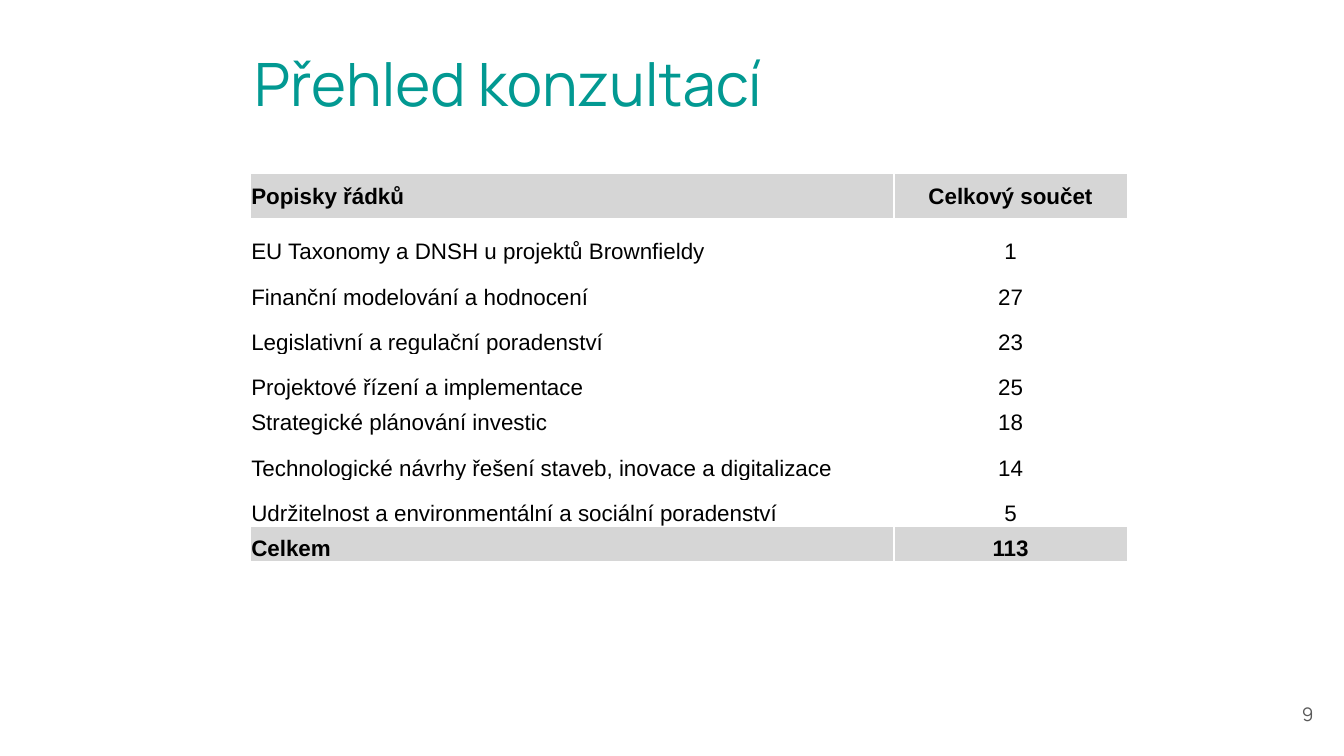
from lxml.etree import SubElement
from pptx import Presentation
from pptx.dml.color import RGBColor
from pptx.enum.text import MSO_ANCHOR, PP_ALIGN
from pptx.oxml.ns import qn
from pptx.util import Inches, Pt

# Content
TITLE = "Přehled konzultací"
PAGE = "9"
ROWS = [
    ("Popisky řádků", "Celkový součet"),
    ("EU Taxonomy a DNSH u projektů Brownfieldy", "1"),
    ("Finanční modelování a hodnocení", "27"),
    ("Legislativní a regulační poradenství", "23"),
    ("Projektové řízení a implementace", "25"),
    ("Strategické plánování investic", "18"),
    ("Technologické návrhy řešení staveb, inovace a digitalizace", "14"),
    ("Udržitelnost a environmentální a sociální poradenství", "5"),
    ("Celkem", "113"),
]
WIDTHS = (4.79, 1.74)
HEIGHT = 2.89
SHORT = {5: 0.26, 8: 0.26}  # rows lower than the rest
TALL = (HEIGHT - sum(SHORT.values())) / (len(ROWS) - len(SHORT))
LEFT, CENTER, RIGHT = PP_ALIGN.LEFT, PP_ALIGN.CENTER, PP_ALIGN.RIGHT


def color(code):
    return RGBColor.from_string(code)


def write(frame, text, size=12, font="Arial", ink="000000", bold=False, align=LEFT):
    para = frame.paragraphs[0]
    para.alignment = align
    run = para.add_run()
    run.text = text
    run.font.size = Pt(size)
    run.font.name = font
    run.font.bold = bold
    run.font.color.rgb = color(ink)


def place(shape, left, top, width, height):
    shape.left, shape.top = Inches(left), Inches(top)
    shape.width, shape.height = Inches(width), Inches(height)
    frame = shape.text_frame
    frame.word_wrap = True
    frame.vertical_anchor = MSO_ANCHOR.MIDDLE
    frame.margin_left = frame.margin_right = Inches(0.1)
    frame.margin_top = frame.margin_bottom = Inches(0.1)
    return frame


def border(cell, code):
    props = cell._tc.get_or_add_tcPr()
    for side in ("lnL", "lnR", "lnT", "lnB"):
        line = SubElement(props, qn("a:" + side), w=str(Pt(1)))
        fill = SubElement(line, qn("a:solidFill"))
        SubElement(fill, qn("a:srgbClr"), val=code)


# Slide in 16:9
deck = Presentation()
deck.slide_width = Inches(10)
deck.slide_height = Inches(10 * 9 / 16)
slide = deck.slides.add_slide(deck.slide_layouts[5])

# Title and page number
frame = place(slide.shapes.title, 1.79, 0.14, 4.98, 0.95)
write(frame, TITLE, size=32, font="Manrope", ink="029992")
box = slide.shapes.add_textbox(0, 0, 0, 0)
frame = place(box, 9.27, 5.1, 0.6, 0.43)
write(frame, PAGE, size=10, font="Manrope", ink="595959", align=RIGHT)

# Table
table = slide.shapes.add_table(
    len(ROWS), len(WIDTHS), Inches(1.86), Inches(1.29),
    Inches(sum(WIDTHS)), Inches(HEIGHT)).table
for col, width in zip(table.columns, WIDTHS):
    col.width = Inches(width)
for i, row in enumerate(ROWS):
    table.rows[i].height = Inches(SHORT.get(i, TALL))
    strong = i in (0, len(ROWS) - 1)
    for j, text in enumerate(row):
        cell = table.cell(i, j)
        border(cell, "FFFFFF")
        cell.fill.solid()
        cell.fill.fore_color.rgb = color("D6D6D6" if strong else "FFFFFF")
        cell.margin_left = cell.margin_right = cell.margin_top = Inches(0.01)
        cell.margin_bottom = 0
        cell.vertical_anchor = MSO_ANCHOR.BOTTOM if i else MSO_ANCHOR.MIDDLE
        write(cell.text_frame, text, bold=strong, align=CENTER if j else LEFT)

deck.save("out.pptx")
